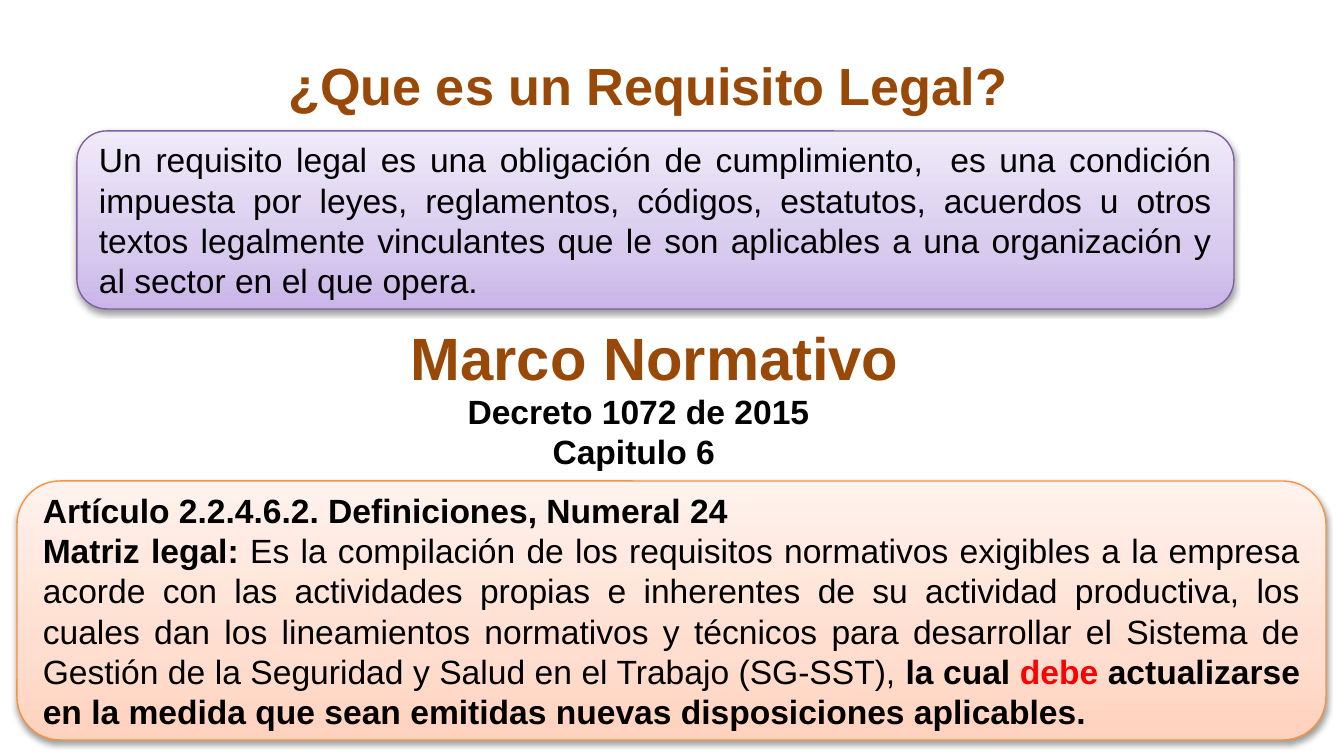
from dataclasses import dataclass

from lxml.etree import SubElement
from pptx import Presentation
from pptx.dml.color import RGBColor
from pptx.enum.shapes import MSO_SHAPE as Shape
from pptx.enum.text import MSO_ANCHOR as Anchor, PP_ALIGN as Align
from pptx.oxml.ns import qn
from pptx.util import Emu, Pt

EMU_PER_PX = 914400 / 134.4
FONT = "Arial"
BLACK, RED, BROWN = "000000", "FF0000", "984807"


@dataclass(frozen=True)
class Run:
    text: str
    bold: bool = False
    color: str = BLACK


@dataclass(frozen=True)
class Box:
    left: int
    top: int
    width: int
    height: int


@dataclass(frozen=True)
class Heading:
    box: Box
    lines: tuple[str, ...]
    size: int
    color: str = BROWN
    anchor: Anchor = Anchor.TOP
    line_spacing: float = 1.0


@dataclass(frozen=True)
class Panel:
    box: Box
    line: str
    gradient: tuple[str, str, str]  # bottom to top
    paragraphs: tuple[tuple[Run, ...], ...]


HEADINGS = (
    Heading(Box(-17, 54, 1344, 97), ("¿Que es un Requisito Legal? ",), 28,
            line_spacing=0.9),
    Heading(Box(-17, 308, 1344, 97), ("Marco Normativo",), 32, anchor=Anchor.MIDDLE),
    Heading(Box(367, 384, 543, 136), ("Decreto 1072 de 2015", "Capitulo 6 "), 18,
            color=BLACK),
)

PANELS = (
    Panel(Box(77, 131, 1157, 178), "7D60A0", ("C9B5E8", "D8CBEE", "F0EAF9"), (
        (Run("Un requisito legal es una obligación de cumplimiento,  es una condición "
             "impuesta por leyes, reglamentos, códigos, estatutos, acuerdos u otros "
             "textos legalmente vinculantes que le son aplicables a una organización y "
             "al sector en el que opera."),),
    )),
    Panel(Box(17, 481, 1309, 259), "F69240", ("FFD2BD", "FFDED0", "FFF2ED"), (
        (Run("Artículo 2.2.4.6.2. Definiciones, Numeral 24", bold=True),),
        (Run("Matriz legal: ", bold=True),
         Run("Es la compilación de los requisitos normativos exigibles a la empresa "
             "acorde con las actividades propias e inherentes de su actividad "
             "productiva, los cuales dan los lineamientos normativos y técnicos para "
             "desarrollar el Sistema de Gestión de la Seguridad y Salud en el Trabajo "
             "(SG-SST), "),
         Run("la cual ", bold=True),
         Run("debe", bold=True, color=RED),
         Run(" actualizarse en la medida que sean emitidas nuevas disposiciones "
             "aplicables.", bold=True)),
    )),
)


def px(n: int) -> Emu:
    return Emu(round(n * EMU_PER_PX))


def rgb(color: str) -> RGBColor:
    return RGBColor.from_string(color)


def place(box: Box) -> tuple[Emu, ...]:
    return px(box.left), px(box.top), px(box.width), px(box.height)


def write(tf, paragraphs, *, size: int, align: Align, anchor: Anchor,
          line_spacing: float = 1.0) -> None:
    tf.word_wrap = True
    tf.vertical_anchor = anchor
    for i, runs in enumerate(paragraphs):
        p = tf.add_paragraph() if i else tf.paragraphs[0]
        p.alignment = align
        p.line_spacing = line_spacing
        for run in runs:
            r = p.add_run()
            r.text = run.text
            r.font.name = FONT
            r.font.size = Pt(size)
            r.font.bold = run.bold
            r.font.color.rgb = rgb(run.color)


def add_color(parent, color: str):
    return SubElement(parent, qn("a:srgbClr"), val=color)


def set_gradient(sp, colors: tuple[str, str, str]) -> None:
    """Fill from bottom to top with stops at 0, 35 and 100 percent."""
    sp.fill.gradient()
    grad = sp._element.spPr.find(qn("a:gradFill"))
    for child in list(grad):
        grad.remove(child)
    stops = SubElement(grad, qn("a:gsLst"))
    for percent, color in zip((0, 35, 100), colors):
        add_color(SubElement(stops, qn("a:gs"), pos=str(percent * 1000)), color)
    SubElement(grad, qn("a:lin"), ang=str(270 * 60000), scaled="1")


def set_shadow(sp) -> None:
    """Cast a soft black shadow straight down."""
    sp.shadow.inherit = False
    effects = sp._element.spPr.find(qn("a:effectLst"))
    shadow = SubElement(effects, qn("a:outerShdw"), blurRad=str(Pt(3.1)),
                        dist=str(Pt(1.6)), dir=str(90 * 60000), rotWithShape="0")
    SubElement(add_color(shadow, BLACK), qn("a:alpha"), val="38000")


def add_heading(slide, heading: Heading) -> None:
    tb = slide.shapes.add_textbox(*place(heading.box))
    lines = [(Run(line, bold=True, color=heading.color),) for line in heading.lines]
    write(tb.text_frame, lines, size=heading.size, align=Align.CENTER,
          anchor=heading.anchor, line_spacing=heading.line_spacing)


def add_panel(slide, panel: Panel) -> None:
    sp = slide.shapes.add_shape(Shape.ROUNDED_RECTANGLE, *place(panel.box))
    set_gradient(sp, panel.gradient)
    sp.line.color.rgb = rgb(panel.line)
    sp.line.width = Pt(0.75)
    set_shadow(sp)
    write(sp.text_frame, panel.paragraphs, size=18, align=Align.JUSTIFY,
          anchor=Anchor.MIDDLE)


def main() -> None:
    prs = Presentation()
    prs.slide_width, prs.slide_height = px(1344), px(756)
    slide = prs.slides.add_slide(prs.slide_layouts[6])
    for heading in HEADINGS:
        add_heading(slide, heading)
    for panel in PANELS:
        add_panel(slide, panel)
    prs.save("out.pptx")


if __name__ == "__main__":
    main()
